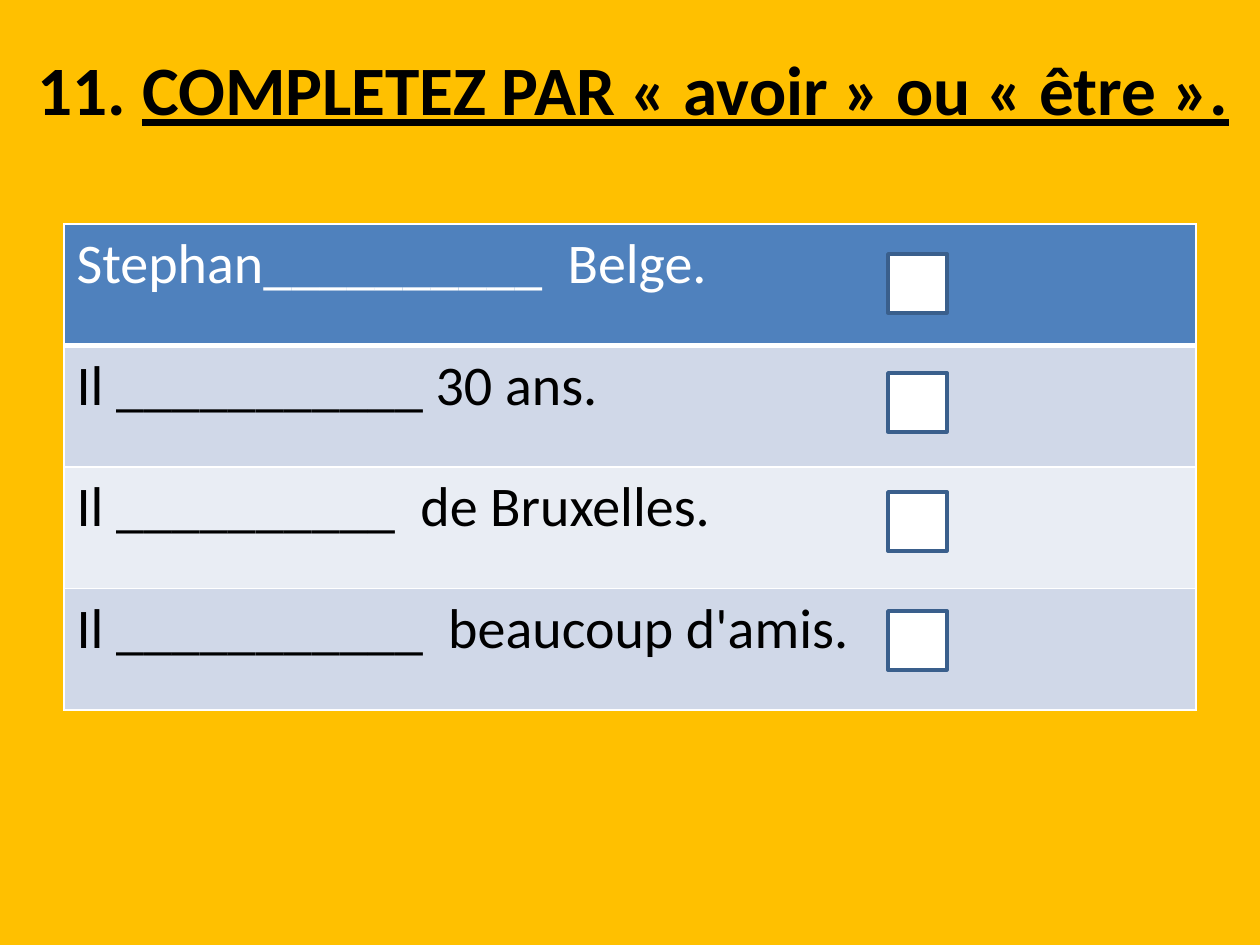
from dataclasses import dataclass

from lxml.etree import SubElement
from pptx import Presentation
from pptx.dml.color import RGBColor
from pptx.enum.shapes import MSO_SHAPE as Shape
from pptx.enum.text import MSO_ANCHOR as Anchor, MSO_AUTO_SIZE as AutoSize, PP_ALIGN as Align
from pptx.oxml.ns import qn
from pptx.util import Emu, Pt


@dataclass(frozen=True)
class Theme:
    font: str = "Calibri"
    background: str = "FFC000"
    ink: str = "000000"
    white: str = "FFFFFF"
    header: str = "4F81BD"
    bands: tuple[str, str] = ("D0D8E8", "E9EDF4")
    box_line: str = "3A5F8C"
    title_size: float = 39.6
    body_size: float = 32


@dataclass(frozen=True)
class Box:
    left: int
    top: int
    width: int
    height: int

    def emu(self) -> tuple[Emu, ...]:
        return tuple(px(v) for v in (self.left, self.top, self.width, self.height))


@dataclass(frozen=True)
class Row:
    text: str
    fill: str
    color: str
    bottom_line: int = 1


THEME = Theme()
TITLE = Box(25, 37, 1235, 187)
TITLE_BOTTOM = 91
TABLE = Box(64, 224, 1132, 486)
CHECKBOX = Box(888, 254, 59, 59)
CHECKBOX_STEP = 119
TITLE_PARTS = (("11. ", False), ("COMPLETEZ PAR « avoir » ou « être ».", True))
ROWS = (
    Row("Stephan__________  Belge.", THEME.header, THEME.white, 3),
    Row("Il ___________ 30 ans.", THEME.bands[0], THEME.ink),
    Row("Il __________  de Bruxelles.", THEME.bands[1], THEME.ink),
    Row("Il ___________  beaucoup d'amis.", THEME.bands[0], THEME.ink),
)


def px(n: int) -> Emu:
    return Emu(round(n * 914400 / 126))


def rgb(color: str) -> RGBColor:
    return RGBColor.from_string(color)


def style_run(r, size: float, color: str, bold: bool = False) -> None:
    r.font.name = THEME.font
    r.font.size = Pt(size)
    r.font.bold = bold
    r.font.color.rgb = rgb(color)


def add_title(s) -> None:
    sp = s.shapes.title
    sp.left, sp.top, sp.width, sp.height = TITLE.emu()
    tf = sp.text_frame
    tf.word_wrap = True
    tf.auto_size = AutoSize.NONE
    tf.vertical_anchor = Anchor.MIDDLE
    tf.margin_bottom = px(TITLE_BOTTOM)
    p = tf.paragraphs[0]
    p.alignment = Align.LEFT
    for text, underline in TITLE_PARTS:
        r = p.add_run()
        r.text = text
        style_run(r, THEME.title_size, THEME.ink, bold=True)
        r.font.underline = underline


def set_borders(cell, top: int, bottom: int) -> None:
    """Draw white borders, with the top and bottom widths in points."""
    tc_pr = cell._tc.get_or_add_tcPr()
    for side, width in (("L", 1), ("R", 1), ("T", top), ("B", bottom)):
        ln = SubElement(tc_pr, qn(f"a:ln{side}"), w=str(Pt(width)))
        SubElement(SubElement(ln, qn("a:solidFill")), qn("a:srgbClr"), val=THEME.white)


def add_sentences(s) -> None:
    table = s.shapes.add_table(len(ROWS), 1, *TABLE.emu()).table
    line_above = 1
    for i, row in enumerate(ROWS):
        cell = table.cell(i, 0)
        set_borders(cell, line_above, row.bottom_line)
        line_above = row.bottom_line
        cell.fill.solid()
        cell.fill.fore_color.rgb = rgb(row.fill)
        p = cell.text_frame.paragraphs[0]
        p.text = row.text
        style_run(p.runs[0], THEME.body_size, row.color)


def add_checkbox(s, box: Box) -> None:
    sp = s.shapes.add_shape(Shape.RECTANGLE, *box.emu())
    sp.shadow.inherit = False
    sp.fill.solid()
    sp.fill.fore_color.rgb = rgb(THEME.white)
    sp.line.color.rgb = rgb(THEME.box_line)
    sp.line.width = Pt(2)


def main() -> None:
    prs = Presentation()
    prs.slide_width, prs.slide_height = px(1260), px(945)
    s = prs.slides.add_slide(prs.slide_layouts[5])
    s.background.fill.solid()
    s.background.fill.fore_color.rgb = rgb(THEME.background)
    add_title(s)
    add_sentences(s)
    for i in range(len(ROWS)):
        top = CHECKBOX.top + i * CHECKBOX_STEP
        add_checkbox(s, Box(CHECKBOX.left, top, CHECKBOX.width, CHECKBOX.height))
    prs.save("out.pptx")


if __name__ == "__main__":
    main()
